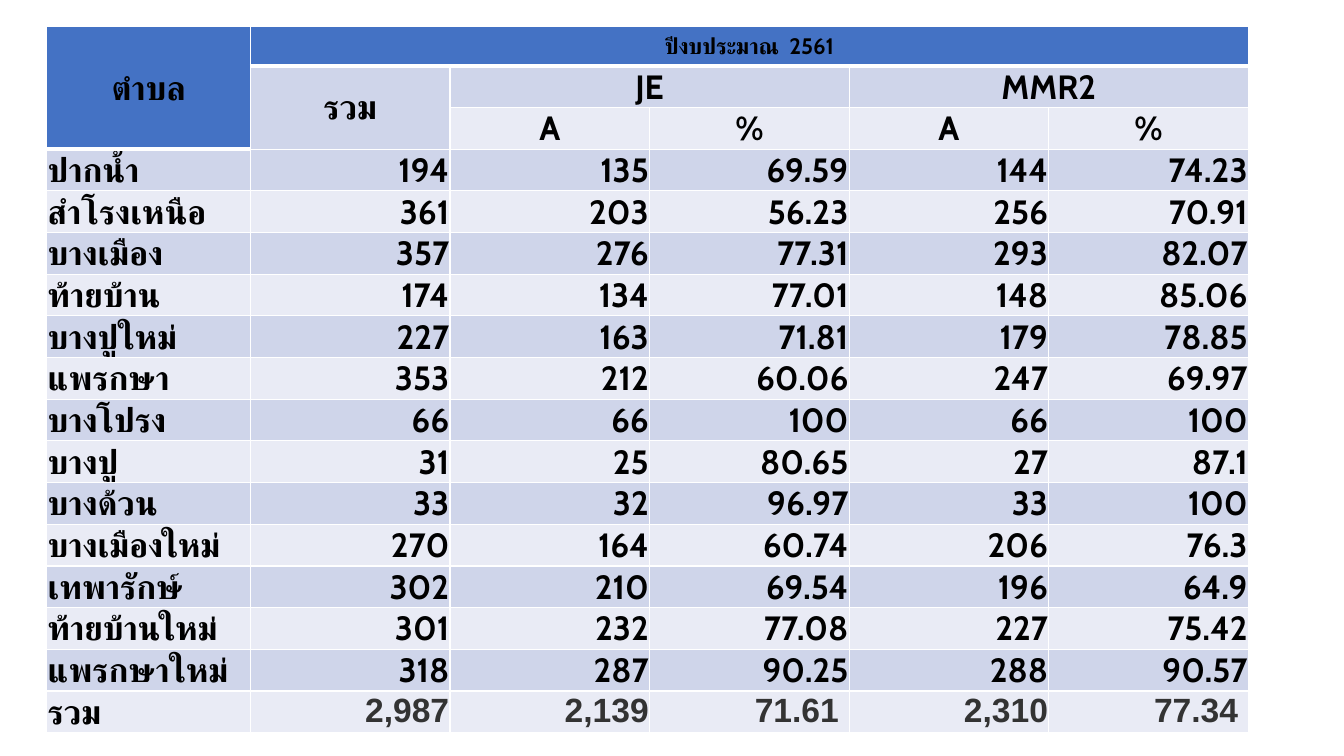
"""Build the slide with vaccine coverage by subdistrict."""
from dataclasses import dataclass

from lxml.etree import SubElement
from pptx import Presentation
from pptx.dml.color import RGBColor
from pptx.enum.text import MSO_ANCHOR, PP_ALIGN
from pptx.oxml.ns import qn
from pptx.util import Cm, Pt


@dataclass(frozen=True)
class Theme:
    """Hold the colours, fonts and type sizes."""

    header: str = "4472C4"
    band_dark: str = "CFD5EA"
    band_light: str = "E9EBF5"
    rule: str = "FFFFFF"
    ink: str = "000000"
    total_ink: str = "333333"
    font: str = "Cabin"
    total_font: str = "Arial"
    year_size: int = 16
    body_size: int = 24
    thin: int = 1
    thick: int = 3


COLUMN_WIDTHS = [5.13] + [5.03] * 5
ROW_HEIGHT = 0.99
PERCENT_INSET = 0.26
HEADINGS = [
    ["ตำบล", "ปีงบประมาณ  2561", "", "", "", ""],
    ["", "รวม", "JE", "", "MMR2", ""],
    ["", "", "A", "%", "A", "%"],
]
MERGES = [((0, 0), (2, 0)), ((0, 1), (0, 5)), ((1, 1), (2, 1)),
          ((1, 2), (1, 3)), ((1, 4), (1, 5))]
SUBDISTRICTS = [
    ["ปากน้ำ", "194", "135", "69.59", "144", "74.23"],
    ["สำโรงเหนือ", "361", "203", "56.23", "256", "70.91"],
    ["บางเมือง", "357", "276", "77.31", "293", "82.07"],
    ["ท้ายบ้าน", "174", "134", "77.01", "148", "85.06"],
    ["บางปูใหม่", "227", "163", "71.81", "179", "78.85"],
    ["แพรกษา", "353", "212", "60.06", "247", "69.97"],
    ["บางโปรง", "66", "66", "100", "66", "100"],
    ["บางปู", "31", "25", "80.65", "27", "87.1"],
    ["บางด้วน", "33", "32", "96.97", "33", "100"],
    ["บางเมืองใหม่", "270", "164", "60.74", "206", "76.3"],
    ["เทพารักษ์", "302", "210", "69.54", "196", "64.9"],
    ["ท้ายบ้านใหม่", "301", "232", "77.08", "227", "75.42"],
    ["แพรกษาใหม่", "318", "287", "90.25", "288", "90.57"],
]
TOTALS = ["รวม", "2,987", "2,139", "71.61", "2,310", "77.34"]


def apply_format(target, values):
    """Set each attribute named in values on the target."""
    for attribute, value in values.items():
        setattr(target, attribute, value)


class CoverageSlide:
    """Draw the elements of one slide in one theme."""

    def __init__(self, slide, theme):
        """Keep the slide and the theme."""
        self.slide = slide
        self.theme = theme

    def add_table(self, rows, left, top, height):
        """Add the coverage table with its merged headings."""
        frame = self.slide.shapes.add_table(
            len(rows), len(COLUMN_WIDTHS), Cm(left), Cm(top),
            Cm(sum(COLUMN_WIDTHS)), Cm(height))
        coverage = frame.table
        apply_format(coverage, {"first_row": False, "horz_banding": False})
        for column, width in zip(coverage.columns, COLUMN_WIDTHS):
            column.width = Cm(width)
        for row in coverage.rows:
            row.height = Cm(ROW_HEIGHT)
        frame.height = Cm(height)
        for row_index, entries in enumerate(rows):
            for column_index, entry in enumerate(entries):
                self.fill_cell(coverage.cell(row_index, column_index), entry,
                               row_index, column_index, row_index == len(rows) - 1)
        for first, last in MERGES:
            coverage.cell(*first).merge(coverage.cell(*last))

    def fill_cell(self, cell, entry, row_index, column_index, is_total):
        """Style one cell by its place and write its entry."""
        theme = self.theme
        is_heading = row_index < len(HEADINGS)
        is_total_figure = is_total and column_index > 0
        anchor = MSO_ANCHOR.MIDDLE if is_heading else MSO_ANCHOR.BOTTOM
        inset = PERCENT_INSET if is_total and column_index in (3, 5) else 0.02
        apply_format(cell, {
            "margin_left": Cm(0.02), "margin_top": Cm(0.02),
            "margin_right": Cm(inset), "margin_bottom": 0,
            "vertical_anchor": MSO_ANCHOR.TOP if is_total_figure else anchor,
        })
        band = theme.band_dark if row_index % 2 else theme.band_light
        is_blue = row_index == 0 or (is_heading and column_index == 0)
        self.add_borders(cell, row_index)
        cell.fill.solid()
        cell.fill.fore_color.rgb = RGBColor.from_string(theme.header if is_blue else band)
        if not entry:
            return
        paragraph = cell.text_frame.paragraphs[0]
        side = PP_ALIGN.RIGHT if column_index else PP_ALIGN.LEFT
        paragraph.alignment = PP_ALIGN.CENTER if is_heading else side
        run = paragraph.add_run()
        run.text = entry
        is_year = row_index == 0 and column_index == 1
        typeface = theme.total_font if is_total_figure else theme.font
        apply_format(run.font, {
            "name": typeface, "bold": True,
            "size": Pt(theme.year_size if is_year else theme.body_size),
        })
        run.font.color.rgb = RGBColor.from_string(
            theme.total_ink if is_total_figure else theme.ink)
        SubElement(run.font._element, qn("a:cs"), typeface=typeface)

    def add_borders(self, cell, row_index):
        """Rule the edges of a cell, with a thick line under the first row."""
        properties = cell._tc.get_or_add_tcPr()
        for edge in ("lnL", "lnR", "lnT", "lnB"):
            if edge == "lnT" and row_index > 0:
                continue
            is_thick = edge == "lnB" and row_index == 0
            width = self.theme.thick if is_thick else self.theme.thin
            line = SubElement(properties, qn(f"a:{edge}"), w=str(Pt(width)))
            paint = SubElement(line, qn("a:solidFill"))
            SubElement(paint, qn("a:srgbClr"), val=self.theme.rule)


def main():
    """Create and save the presentation."""
    presentation = Presentation()
    apply_format(presentation, {"slide_width": Cm(33.87), "slide_height": Cm(19.05)})
    slide = presentation.slides.add_slide(presentation.slide_layouts[6])
    coverage_slide = CoverageSlide(slide, Theme())
    coverage_slide.add_table(HEADINGS + SUBDISTRICTS + [TOTALS], 1.18, 0.67, 17.65)
    presentation.save("out.pptx")


if __name__ == "__main__":
    main()
